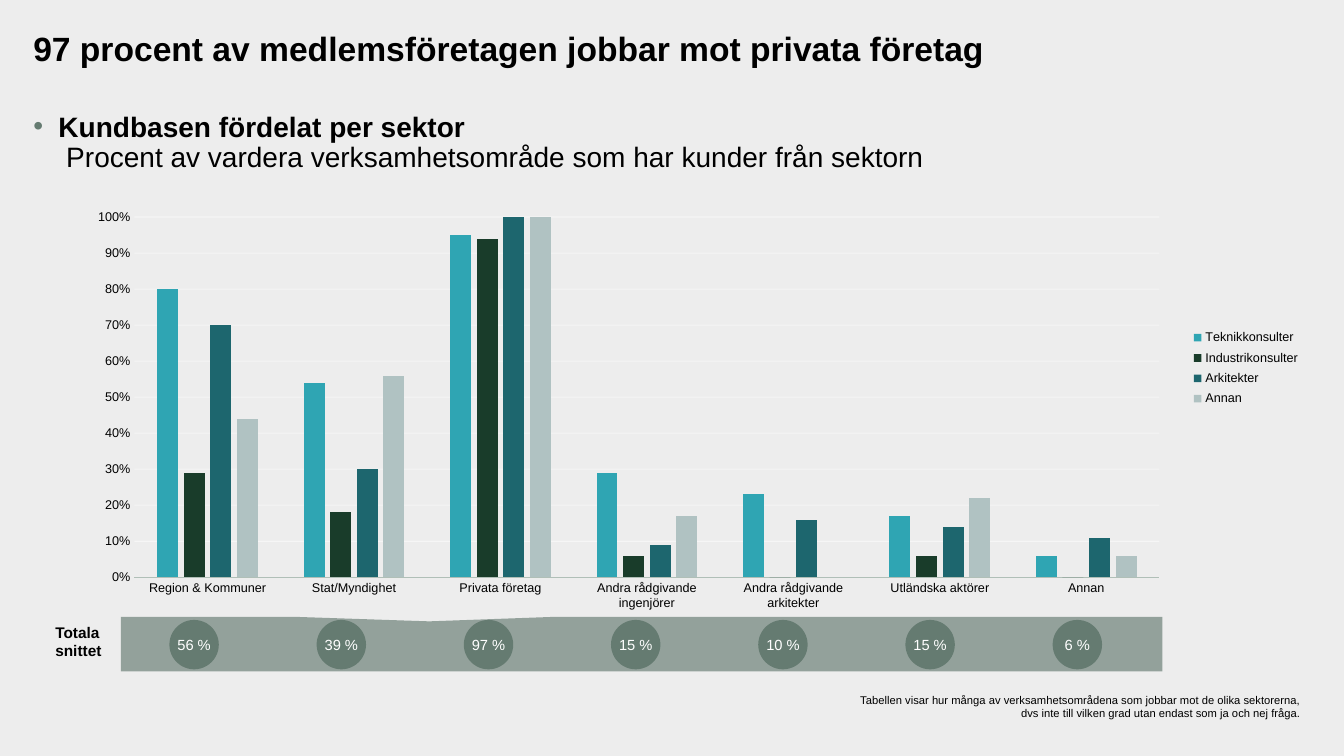
from dataclasses import dataclass

from lxml.etree import SubElement
from pptx import Presentation
from pptx.chart.data import CategoryChartData
from pptx.dml.color import RGBColor
from pptx.enum.chart import XL_CHART_TYPE, XL_LEGEND_POSITION, XL_TICK_MARK
from pptx.enum.shapes import MSO_SHAPE
from pptx.enum.text import MSO_ANCHOR, PP_ALIGN
from pptx.oxml import parse_xml
from pptx.oxml.ns import nsdecls, qn
from pptx.util import Inches, Pt

FONT = "Arial"
BLACK = RGBColor(0x00, 0x00, 0x00)
WHITE = RGBColor(0xFF, 0xFF, 0xFF)
BACKGROUND = RGBColor(0xED, 0xED, 0xED)
SAGE = RGBColor(0x65, 0x7B, 0x71)
AXIS_LINE = RGBColor(0xB0, 0xBF, 0xB7)
GRID_LINE = RGBColor(0xF8, 0xF8, 0xF8)
TURQUOISE = RGBColor(0x2F, 0xA5, 0xB3)
DARK_GREEN = RGBColor(0x19, 0x3C, 0x2A)
PETROL = RGBColor(0x1D, 0x66, 0x6E)
PALE_GREEN = RGBColor(0xB0, 0xC2, 0xC2)


@dataclass
class Line:
    text: str
    bold: bool = False


@dataclass
class Sector:
    name: str
    average: str


@dataclass
class Business:
    name: str
    color: RGBColor
    shares: tuple[float, ...]


SECTORS = [
    Sector("Region & Kommuner", "56 %"),
    Sector("Stat/Myndighet", "39 %"),
    Sector("Privata företag", "97 %"),
    Sector("Andra rådgivande ingenjörer", "15 %"),
    Sector("Andra rådgivande arkitekter", "10 %"),
    Sector("Utländska aktörer", "15 %"),
    Sector("Annan", "6 %"),
]
BUSINESSES = [
    Business("Teknikkonsulter", TURQUOISE, (0.8, 0.54, 0.95, 0.29, 0.23, 0.17, 0.06)),
    Business("Industrikonsulter", DARK_GREEN, (0.29, 0.18, 0.94, 0.06, 0, 0.06, 0)),
    Business("Arkitekter", PETROL, (0.7, 0.3, 1, 0.09, 0.16, 0.14, 0.11)),
    Business("Annan", PALE_GREEN, (0.44, 0.56, 1, 0.17, 0, 0.22, 0.06)),
]


def write_text(s, lines: list[Line], *, size: float, color=BLACK, align=PP_ALIGN.LEFT,
               anchor=MSO_ANCHOR.TOP, insets=(0.1, 0.05), spacing=None):
    """Fill a shape with one paragraph whose lines are split by breaks."""
    tf = s.text_frame
    tf.word_wrap = True
    tf.vertical_anchor = anchor
    tf.margin_left = tf.margin_right = Inches(insets[0])
    tf.margin_top = tf.margin_bottom = Inches(insets[1])
    p = tf.paragraphs[0]
    p.alignment = align
    if spacing:
        p.line_spacing = spacing
    for i, line in enumerate(lines):
        if i:
            p.add_line_break()
        r = p.add_run()
        r.text = line.text
        r.font.name, r.font.size, r.font.bold = FONT, Pt(size), line.bold
        r.font.color.rgb = color
    return p


def add_text(slide, box: tuple[float, ...], lines: list[Line], **style):
    s = slide.shapes.add_textbox(*map(Inches, box))
    return write_text(s, lines, **style)


def add_filled(slide, kind: MSO_SHAPE, box: tuple[float, ...]):
    s = slide.shapes.add_shape(kind, *map(Inches, box))
    s.shadow.inherit = False
    s.fill.solid()
    s.fill.fore_color.rgb = SAGE
    s.line.fill.background()
    return s


def add_bullet(p, color: RGBColor, indent: float) -> None:
    pPr = p._p.get_or_add_pPr()
    pPr.set("marL", str(Inches(indent)))
    pPr.set("indent", str(-Inches(indent)))
    SubElement(SubElement(pPr, qn("a:buClr")), qn("a:srgbClr"), val=str(color))
    SubElement(pPr, qn("a:buFont"), typeface=FONT)
    SubElement(pPr, qn("a:buChar"), char="•")


def set_opacity(element, percent: int) -> None:
    color = next(element.iter(qn("a:srgbClr")))
    SubElement(color, qn("a:alpha"), val=str(percent * 1000))


def set_font(font, size: float) -> None:
    font.name, font.size = FONT, Pt(size)
    font.color.rgb = BLACK


def layout_xml(x: float, y: float, w: float, h: float, target: str = ""):
    return parse_xml(
        f'<c:layout {nsdecls("c")}><c:manualLayout>{target}'
        '<c:xMode val="edge"/><c:yMode val="edge"/>'
        f'<c:x val="{x}"/><c:y val="{y}"/><c:w val="{w}"/><c:h val="{h}"/>'
        '</c:manualLayout></c:layout>')


def add_sector_chart(slide) -> None:
    data = CategoryChartData(number_format="0%")
    data.categories = [sector.name for sector in SECTORS]
    for business in BUSINESSES:
        data.add_series(business.name, business.shares)
    box = map(Inches, (0.72, 2.03, 12.25, 4.11))
    chart = slide.shapes.add_chart(XL_CHART_TYPE.COLUMN_CLUSTERED, *box, data).chart
    chart.has_title = False
    set_font(chart.font, 10)

    # Columns
    plot = chart.plots[0]
    plot.vary_by_categories = False
    plot.gap_width, plot.overlap = 218, -27
    for series, business in zip(plot.series, BUSINESSES):
        series.format.fill.solid()
        series.format.fill.fore_color.rgb = business.color

    # Axes
    for axis in (chart.category_axis, chart.value_axis):
        axis.major_tick_mark = axis.minor_tick_mark = XL_TICK_MARK.NONE
        set_font(axis.tick_labels.font, 9)
    base = chart.category_axis.format.line
    base.color.rgb, base.width = AXIS_LINE, Pt(0.75)
    values = chart.value_axis
    values.minimum_scale, values.maximum_scale, values.major_unit = 0, 1, 0.1
    values.tick_labels.number_format = "0%"
    values.tick_labels.number_format_is_linked = False
    values.format.line.fill.background()
    grid = values.major_gridlines.format.line
    grid.color.rgb, grid.width = GRID_LINE, Pt(0.75)
    set_opacity(values._element.find(qn("c:majorGridlines")), 89)

    # Legend and plot placement
    chart.has_legend = True
    legend = chart.legend
    legend.position = XL_LEGEND_POSITION.RIGHT
    legend.include_in_layout = False
    set_font(legend.font, 9)
    legend_el = legend._element
    plot_area = chart._chartSpace.chart.plotArea
    for parent in (legend_el, plot_area):
        for old in parent.findall(qn("c:layout")):
            parent.remove(old)
    legend_el.find(qn("c:legendPos")).addnext(layout_xml(0.9, 0.29, 0.1, 0.21))
    plot_area.insert(0, layout_xml(0.05, 0.03, 0.83, 0.87, '<c:layoutTarget val="inner"/>'))


def add_averages(slide) -> None:
    for i, sector in enumerate(SECTORS):
        circle = add_filled(slide, MSO_SHAPE.OVAL, (1.68 + 1.46 * i, 6.15, 0.49, 0.49))
        write_text(circle, [Line(sector.average)], size=10.5, color=WHITE,
                   align=PP_ALIGN.CENTER, anchor=MSO_ANCHOR.MIDDLE, insets=(0, 0.05))


def main() -> None:
    prs = Presentation()
    prs.slide_width, prs.slide_height = Inches(13.33), Inches(7.5)
    slide = prs.slides.add_slide(prs.slide_layouts[6])
    slide.background.fill.solid()
    slide.background.fill.fore_color.rgb = BACKGROUND

    # Headings
    add_text(slide, (0.33, 0.32, 12.68, 0.56),
             [Line("97 procent av medlemsföretagen jobbar mot privata företag", True)],
             size=24, insets=(0, 0), spacing=0.9)
    p = add_text(slide, (0.33, 1.12, 12.68, 0.68),
                 [Line("Kundbasen fördelat per sektor", True),
                  Line(" Procent av vardera verksamhetsområde som har kunder från sektorn")],
                 size=20, insets=(0, 0), spacing=0.9)
    add_bullet(p, SAGE, 0.25)

    # Band behind the averages
    band = add_filled(slide, MSO_SHAPE.RECTANGULAR_CALLOUT, (1.2, 6.12, 10.33, 0.54))
    band.adjustments[0], band.adjustments[1] = -0.204, 0.417
    band._element.spPr.find(qn("a:xfrm")).set("flipV", "1")
    set_opacity(band._element.spPr, 66)

    add_sector_chart(slide)
    add_averages(slide)

    # Band label and footnote
    add_text(slide, (0.45, 6.13, 0.87, 0.47), [Line("Totala snittet", True)], size=11)
    add_text(slide, (7.24, 6.83, 5.76, 0.37),
             [Line("Tabellen visar hur många av verksamhetsområdena som jobbar mot de olika sektorerna,"),
              Line("dvs inte till vilken grad utan endast som ja och nej fråga.")],
             size=8, align=PP_ALIGN.RIGHT)

    prs.save("out.pptx")


if __name__ == "__main__":
    main()
